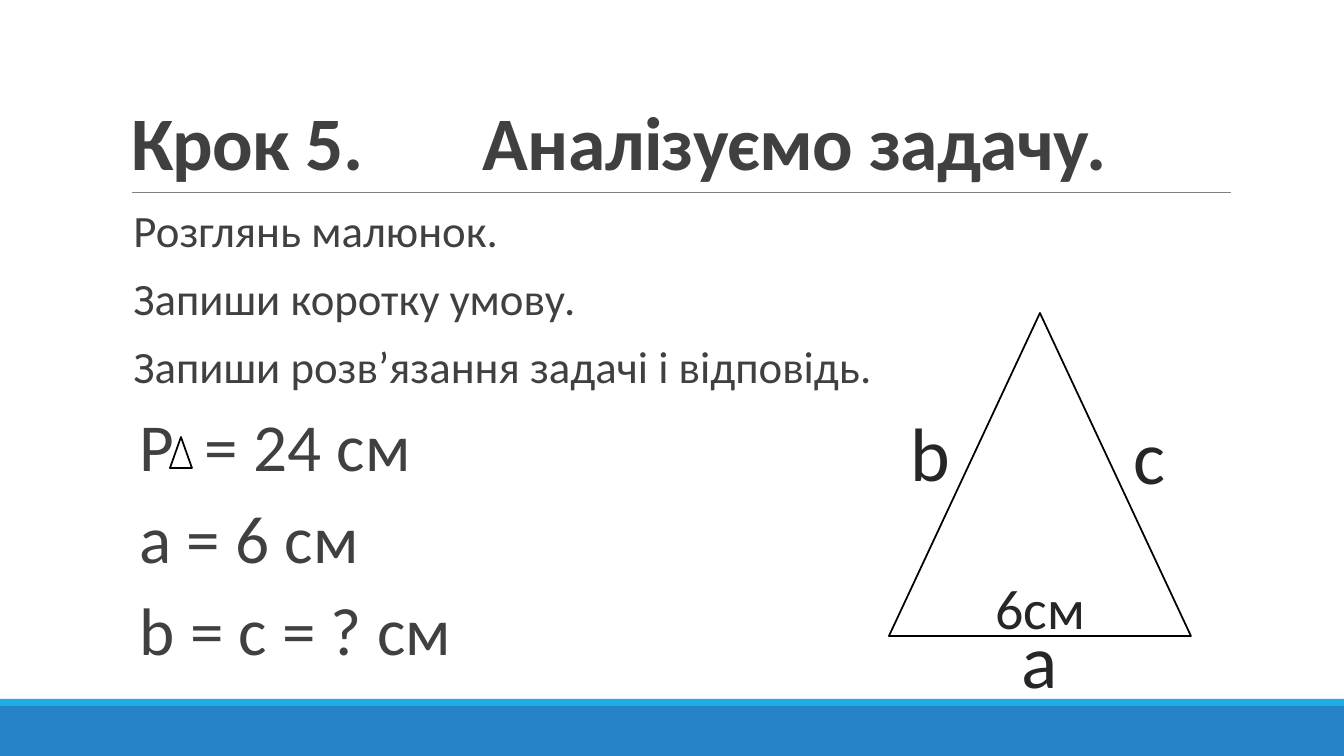
import pptx
import pptx.dml.color
import pptx.enum.shapes
import pptx.enum.text
import pptx.oxml.ns
import pptx.util
from lxml import etree

EMU_PER_PX = 914400 / 100.8
SLIDE_SIZE = (1344, 756)
FONT = "Calibri"
GREY, DARK, BLACK, WHITE = "404040", "262626", "000000", "FFFFFF"
RULE_GREY, BLUE, CYAN = "808080", "2683C6", "1CADE4"
ALIGN = pptx.enum.text.PP_ALIGN
ANCHOR = pptx.enum.text.MSO_ANCHOR
SHAPE = pptx.enum.shapes.MSO_SHAPE

# A paragraph is a list of (text, letter spacing in points) runs;
# a widened space leaves the gap between two parts of a line.
TITLE = [("Крок 5.", -0.5), (" ", 73), ("Аналізуємо задачу.", -0.5)]
TITLE_BOX = (121, 31, 1109, 160)
TASKS = ["Розглянь малюнок.", "Запиши коротку умову.",
         "Запиши розв’язання задачі і відповідь."]
GIVEN = [[("Р", 0), (" ", 11), ("= 24 см", 0)], "а = 6 см", "b = с = ? см"]
BODY_BOX = (121, 204, 1109, 81)
BANDS = [((0, 706, 1344, 50), BLUE), ((0, 699, 1344, 7), CYAN)]
RULE = (132, 192, 1231, 192)
TRIANGLES = [(170, 437, 22, 31), (889, 313, 302, 323)]
LABELS = [  # text, box, size, wrap
    ("а", (1012, 608, 56, 102), 54, False),
    ("6см", (985, 569, 111, 78), 40, False),
    ("с", (1124, 404, 52, 102), 54, False),
    ("b", (901, 401, 58, 104), 54, True),
]


def px(length):
    return pptx.util.Emu(round(length * EMU_PER_PX))


def rgb(color):
    return pptx.dml.color.RGBColor.from_string(color)


def place(shape, box):
    shape.left, shape.top, shape.width, shape.height = map(px, box)


def write_text(paragraph, text, size, color, bold=False, align=ALIGN.LEFT,
               line_spacing=None, before=None, after=None):
    """Fill a paragraph from a string or a list of (text, spacing) runs."""
    paragraph.alignment = align
    paragraph.line_spacing = line_spacing
    if before is not None:
        paragraph.space_before = pptx.util.Pt(before)
    if after is not None:
        paragraph.space_after = pptx.util.Pt(after)
    for words, spacing in [(text, 0)] if isinstance(text, str) else text:
        run = paragraph.add_run()
        run.text = words
        run.font.name = FONT
        run.font.size = pptx.util.Pt(size)
        run.font.bold = bold
        run.font.color.rgb = rgb(color)
        if spacing:
            run.font._element.set("spc", str(round(spacing * 100)))


def set_blank_bullet(paragraph, indent):
    properties = paragraph._p.get_or_add_pPr()
    properties.set("marL", str(px(indent)))
    properties.set("indent", str(-px(indent)))
    bullet = etree.SubElement(properties, pptx.oxml.ns.qn("a:buChar"))
    bullet.set("char", " ")


def add_filled_shape(slide, kind, box, fill, line=None):
    shape = slide.shapes.add_shape(kind, *map(px, box))
    shape.shadow.inherit = False
    shape.fill.solid()
    shape.fill.fore_color.rgb = rgb(fill)
    if line:
        shape.line.color.rgb = rgb(line)
        shape.line.width = pptx.util.Pt(1.25)
    else:
        shape.line.fill.background()


def add_rule(slide):
    rule = slide.shapes.add_connector(
        pptx.enum.shapes.MSO_CONNECTOR.STRAIGHT, *map(px, RULE))
    rule.line.color.rgb = rgb(RULE_GREY)
    rule.line.width = pptx.util.Pt(0.5)
    etree.SubElement(rule._element.spPr, pptx.oxml.ns.qn("a:effectLst"))


def fill_title(title):
    place(title, TITLE_BOX)
    frame = title.text_frame
    frame.auto_size = pptx.enum.text.MSO_AUTO_SIZE.NONE
    frame.vertical_anchor = ANCHOR.BOTTOM
    write_text(frame.paragraphs[0], TITLE, 54, GREY, bold=True, line_spacing=0.85)


def fill_body(body):
    place(body, BODY_BOX)
    frame = body.text_frame
    frame.auto_size = pptx.enum.text.MSO_AUTO_SIZE.NONE
    frame.vertical_anchor = ANCHOR.TOP
    frame.margin_left = frame.margin_right = 0
    lines = [(text, 32) for text in TASKS] + [(text, 48) for text in GIVEN]
    for index, (text, size) in enumerate(lines):
        paragraph = frame.add_paragraph() if index else frame.paragraphs[0]
        write_text(paragraph, text, size, GREY, align=ALIGN.JUSTIFY,
                   line_spacing=0.9, before=12, after=2)
        set_blank_bullet(paragraph, 10)


def add_label(slide, text, box, size, wrap):
    frame = slide.shapes.add_textbox(*map(px, box)).text_frame
    frame.word_wrap = wrap
    frame.auto_size = pptx.enum.text.MSO_AUTO_SIZE.SHAPE_TO_FIT_TEXT
    write_text(frame.paragraphs[0], text, size, DARK, align=ALIGN.CENTER)


def main():
    presentation = pptx.Presentation()
    presentation.slide_width, presentation.slide_height = map(px, SLIDE_SIZE)
    slide = presentation.slides.add_slide(presentation.slide_layouts[1])
    for box, fill in BANDS:
        add_filled_shape(slide, SHAPE.RECTANGLE, box, fill)
    add_rule(slide)
    fill_title(slide.shapes.title)
    fill_body(slide.placeholders[1])
    for box in TRIANGLES:
        add_filled_shape(slide, SHAPE.ISOSCELES_TRIANGLE, box, WHITE, BLACK)
    for label in LABELS:
        add_label(slide, *label)
    presentation.save("out.pptx")


if __name__ == "__main__":
    main()
